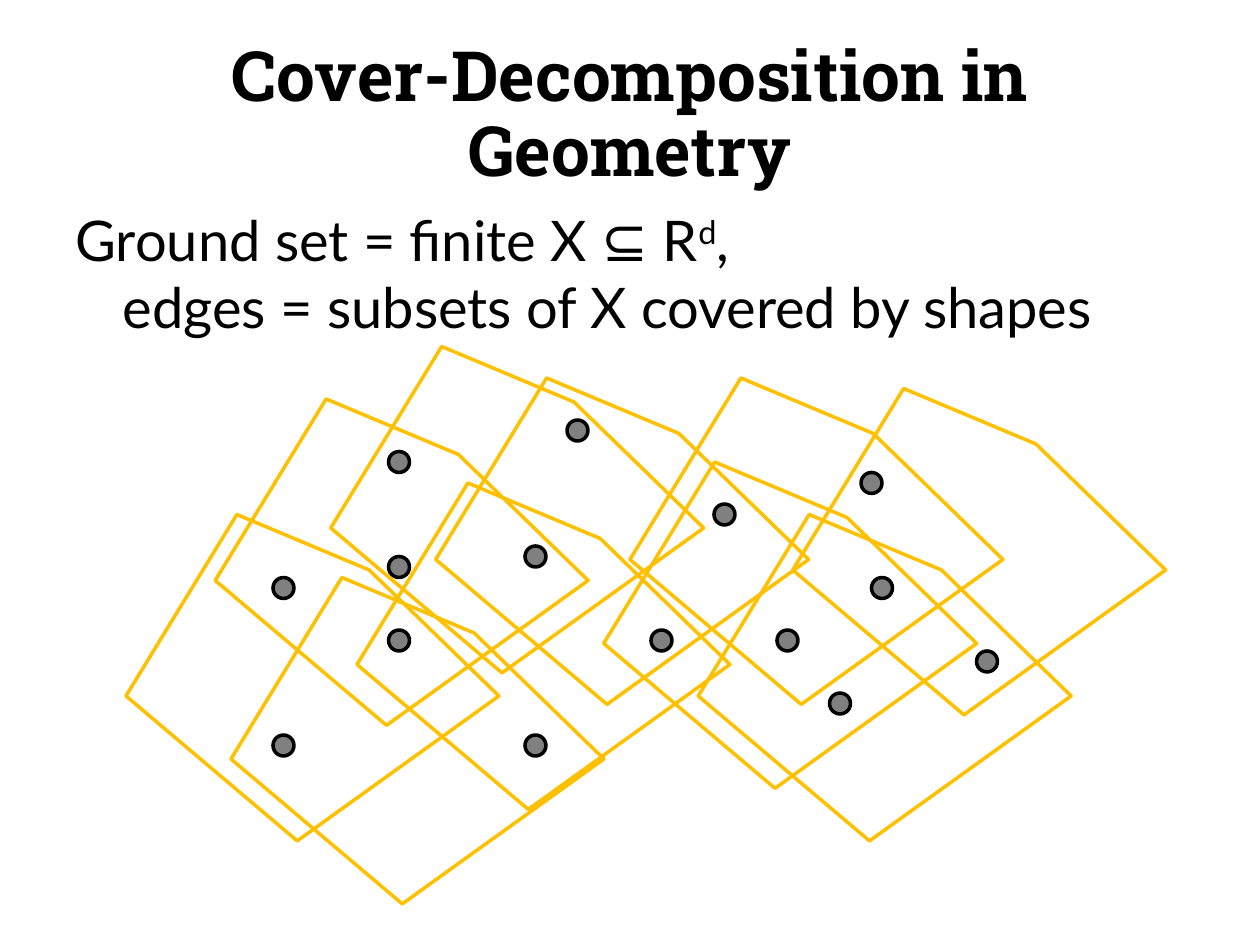
from dataclasses import dataclass
from typing import NamedTuple

from pptx import Presentation
from pptx.dml.color import RGBColor
from pptx.enum.shapes import MSO_SHAPE
from pptx.enum.text import MSO_ANCHOR, PP_ALIGN
from pptx.shapes.autoshape import Shape
from pptx.slide import Slide
from pptx.text.text import _Run as Run
from pptx.util import Pt


@dataclass(frozen=True)
class Theme:
    text: RGBColor = RGBColor(0, 0, 0)
    dot: RGBColor = RGBColor(0x80, 0x80, 0x80)
    region: RGBColor = RGBColor(0xFF, 0xC0, 0x00)
    title_font: str = "Roboto Slab"
    body_font: str = "Lato"
    title_size: float = 39.6
    body_size: float = 32
    line_width: float = 2


class Position(NamedTuple):
    left: float
    top: float


THEME = Theme()
DOT_SIZE = 12
HANGING_INDENT = 27

# One pentagon, translated to every position below
PENTAGON = [(0, 103.7), (63.4, 0), (139, 31.7), (213.1, 103.7), (97.9, 186.5)]
PENTAGON_POSITIONS = [
    Position(123, 228), Position(249, 216), Position(72, 294), Position(132, 330),
    Position(204, 276), Position(399, 294), Position(453, 222), Position(345, 264),
    Position(189, 198), Position(360, 216),
]
DOT_POSITIONS = [
    Position(300, 312), Position(372, 360), Position(444, 360), Position(300, 420),
    Position(222, 360), Position(222, 318), Position(408, 288), Position(324, 240),
    Position(156, 420), Position(558, 372), Position(156, 330), Position(474, 396),
    Position(498, 330), Position(492, 270), Position(222, 258),
]


def add_text_box(slide: Slide, left: float, top: float, width: float, height: float) -> Shape:
    box = slide.shapes.add_textbox(Pt(left), Pt(top), Pt(width), Pt(height))
    box.text_frame.word_wrap = True
    return box


def format_run(run: Run, font: str, size: float, bold: bool = False) -> None:
    run.font.name = font
    run.font.size = Pt(size)
    run.font.bold = bold
    run.font.color.rgb = THEME.text


def add_title(slide: Slide) -> None:
    frame = add_text_box(slide, 36, 21.6, 648, 90).text_frame
    frame.vertical_anchor = MSO_ANCHOR.MIDDLE
    frame.text = "Cover-Decomposition in Geometry"
    paragraph = frame.paragraphs[0]
    paragraph.alignment = PP_ALIGN.CENTER
    paragraph.line_spacing = 0.9
    format_run(paragraph.runs[0], THEME.title_font, THEME.title_size, bold=True)


def add_definition(slide: Slide) -> None:
    frame = add_text_box(slide, 36, 114, 684, 450).text_frame
    paragraph = frame.paragraphs[0]
    paragraph.text = "Ground set = finite X ⊆ R"
    paragraph.space_before = Pt(5)
    exponent = paragraph.add_run()
    exponent.text = "d"
    paragraph.add_run().text = ","
    paragraph.add_line_break()
    paragraph.add_run().text = "edges = subsets of X covered by shapes"
    for run in paragraph.runs:
        format_run(run, THEME.body_font, THEME.body_size)

    # Superscript and hanging indent
    exponent.font._element.set("baseline", "30000")
    properties = paragraph._p.get_or_add_pPr()
    properties.set("marL", str(Pt(HANGING_INDENT)))
    properties.set("indent", str(-Pt(HANGING_INDENT)))


def set_outline(shape: Shape, color: RGBColor) -> None:
    shape.shadow.inherit = False
    shape.line.color.rgb = color
    shape.line.width = Pt(THEME.line_width)


def add_dot(slide: Slide, position: Position) -> None:
    dot = slide.shapes.add_shape(
        MSO_SHAPE.OVAL, Pt(position.left), Pt(position.top), Pt(DOT_SIZE), Pt(DOT_SIZE)
    )
    dot.fill.solid()
    dot.fill.fore_color.rgb = THEME.dot
    set_outline(dot, THEME.text)


def add_pentagon(slide: Slide, position: Position) -> None:
    corners = [(Pt(position.left + x), Pt(position.top + y)) for x, y in PENTAGON]
    builder = slide.shapes.build_freeform(*corners[0])
    builder.add_line_segments(corners[1:], close=True)
    pentagon = builder.convert_to_shape()
    pentagon.fill.background()
    set_outline(pentagon, THEME.region)


def main() -> None:
    presentation = Presentation()
    presentation.slide_width = Pt(720)
    presentation.slide_height = Pt(540)
    slide = presentation.slides.add_slide(presentation.slide_layouts[6])

    # Wording
    add_definition(slide)
    add_title(slide)

    # Points of the ground set and the shapes covering them
    for position in DOT_POSITIONS:
        add_dot(slide, position)
    for position in PENTAGON_POSITIONS:
        add_pentagon(slide, position)

    presentation.save("out.pptx")


if __name__ == "__main__":
    main()
